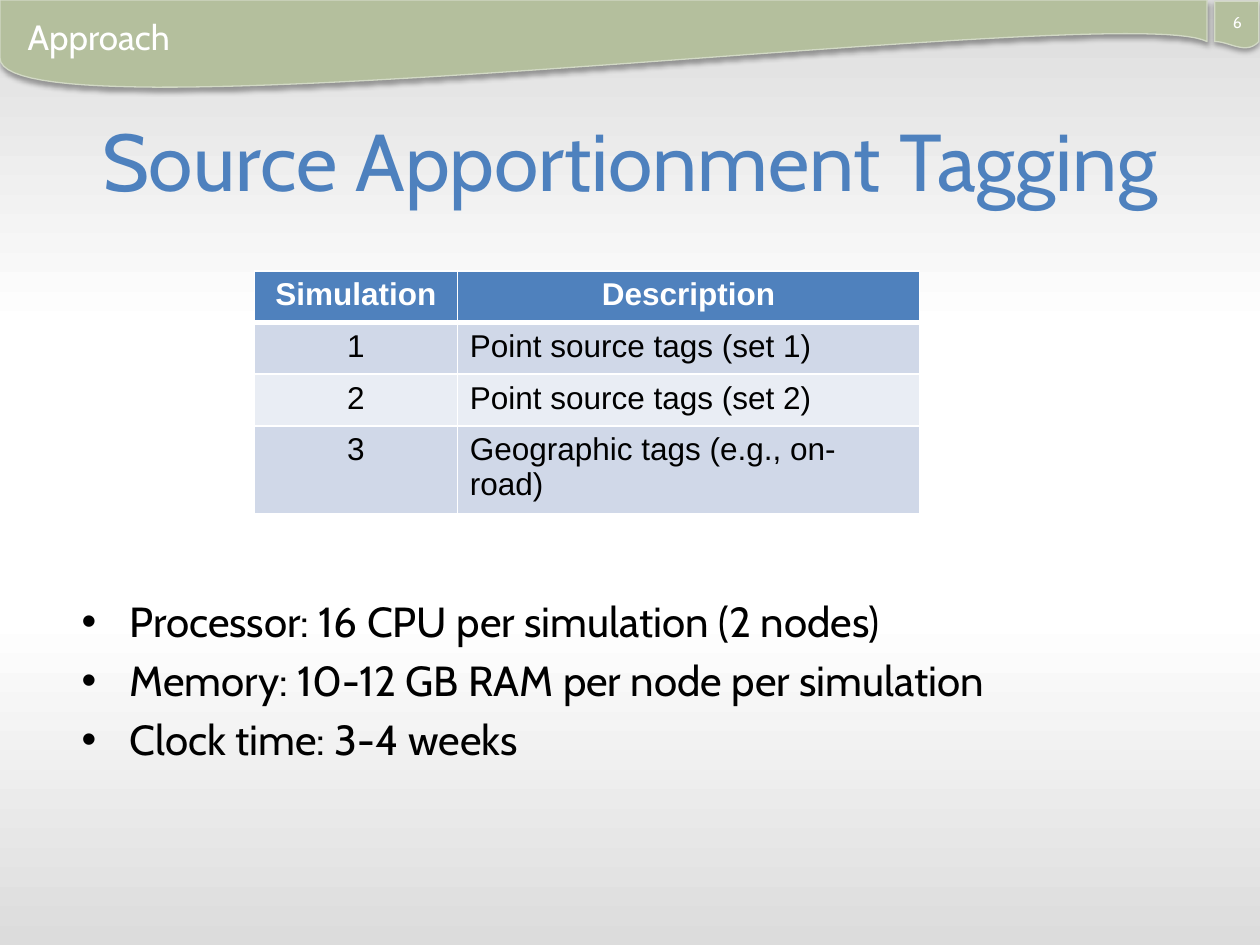
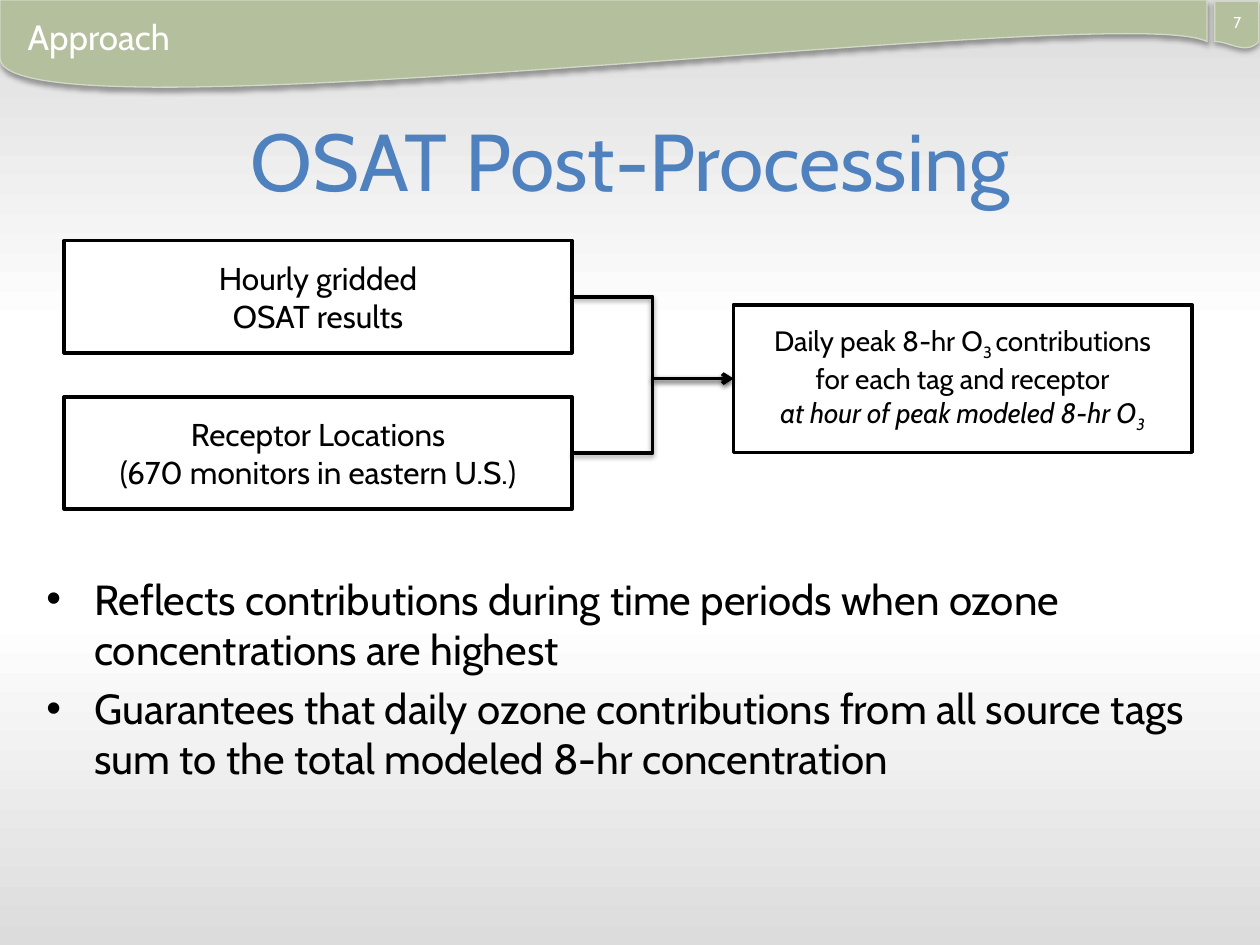
"""Build two slides on source apportionment tagging and its post-processing."""
import copy
import dataclasses

import lxml.etree
import pptx
import pptx.dml.color
import pptx.enum.shapes
import pptx.enum.text
import pptx.oxml.ns
import pptx.util

Inches, Pt = pptx.util.Inches, pptx.util.Pt
Align, Anchor = pptx.enum.text.PP_ALIGN, pptx.enum.text.MSO_ANCHOR

FONT = "Cabin"
COLORS = {
    "black": "000000", "white": "FFFFFF", "edge": "DCDCDC",
    "band": "B4BF9D", "rim": "D2D9C5", "title": "4E81BE",
    "head": "4F81BD", "odd": "D0D8E8", "even": "E9EDF4",
}
STOPS = [(0, "edge"), (35, "white"), (65, "white"), (100, "edge")]


@dataclasses.dataclass
class Bit:
    text: str
    low: bool = False
    slant: bool = False


@dataclasses.dataclass
class Box:
    left: float
    top: float
    width: float
    height: float

    def place(self) -> list:
        return [Inches(v) for v in (self.left, self.top, self.width, self.height)]


@dataclasses.dataclass
class Band:
    start: list
    curve: list


BANDS = [
    Band([(0, 0), (9.58, 0)], [(9.58, 0.33), (8.94, -0.01), (0, 1.17), (0, 0.46)]),
    Band([(9.64, 0.01), (9.99, 0.01)],
         [(9.99, 0.33), (9.89, 0.44), (9.76, 0.33), (9.64, 0.33)]),
]
TABLE = [
    ("Simulation", "Description"),
    ("1", "Point source tags (set 1)"),
    ("2", "Point source tags (set 2)"),
    ("3", "Geographic tags (e.g., on-road)"),
]
INPUTS = [
    (Box(0.51, 1.91, 4.03, 0.89), "Hourly gridded\nOSAT results"),
    (Box(0.51, 3.15, 4.03, 0.89), "Receptor Locations\n(670 monitors in eastern U.S.)"),
]
RESULT = [
    [Bit("Daily peak 8-hr O"), Bit("3 ", low=True),
     Bit("contributions\nfor each tag and receptor")],
    [Bit("at hour of peak modeled 8-hr O", slant=True), Bit("3", low=True, slant=True)],
]


def rgb(name: str) -> pptx.dml.color.RGBColor:
    return pptx.dml.color.RGBColor.from_string(COLORS[name])


def node(parent, tag: str, **attrs):
    return lxml.etree.SubElement(parent, pptx.oxml.ns.qn(tag), attrs)


def write(frame, lines: list, size=18, color="black", font=FONT, bold=False,
          align=Align.LEFT, anchor=Anchor.TOP, pitch=None, bullet=False) -> None:
    frame.word_wrap = True
    frame.vertical_anchor = anchor
    for row, line in enumerate(lines):
        para = frame.add_paragraph() if row else frame.paragraphs[0]
        if bullet:
            props = para._p.get_or_add_pPr()
            props.set("marL", str(Inches(0.38)))
            props.set("indent", str(-Inches(0.38)))
            node(props, "a:buFont", typeface="Arial")
            node(props, "a:buChar", char="•")
            if row:
                para.space_before = Pt(size * 0.2)
        para.alignment = align
        if pitch:
            para.line_spacing = Pt(pitch)
        for bit in [Bit(line)] if isinstance(line, str) else line:
            for part, text in enumerate(bit.text.split("\n")):
                if part:
                    para.add_line_break()
                run = para.add_run()
                run.text = text
                run.font.name, run.font.size = font, Pt(size)
                run.font.bold, run.font.italic = bold, bit.slant
                run.font.color.rgb = rgb(color)
                if bit.low:
                    run._r.get_or_add_rPr().set("baseline", "-25000")


def label(slide, box: Box, lines: list, **style) -> None:
    write(slide.shapes.add_textbox(*box.place()).text_frame, lines, **style)


def paint(shape, fill: str, line: str, width: float) -> None:
    shape.shadow.inherit = False
    shape.fill.solid()
    shape.fill.fore_color.rgb = rgb(fill)
    shape.line.color.rgb = rgb(line)
    shape.line.width = Pt(width)


def shade(props, alpha: int, drop: float) -> None:
    effects = props.find(pptx.oxml.ns.qn("a:effectLst"))
    if effects is None:
        effects = node(props, "a:effectLst")
    shadow = node(effects, "a:outerShdw", blurRad=str(Pt(3.1)), dist=str(Pt(drop)),
                  dir="5400000", rotWithShape="0")
    tint = node(shadow, "a:srgbClr", val=COLORS["black"])
    node(tint, "a:alpha", val=str(alpha * 1000))


def bend(curve: list, steps: int = 60) -> list:
    points = []
    for step in range(steps + 1):
        t = step / steps
        mix = ((1 - t) ** 3, 3 * t * (1 - t) ** 2, 3 * t * t * (1 - t), t ** 3)
        points.append(tuple(sum(m * p[axis] for m, p in zip(mix, curve))
                            for axis in (0, 1)))
    return points


def ribbon(slide, band: Band) -> None:
    first, *rest = [(Inches(x), Inches(y)) for x, y in band.start + bend(band.curve)]
    build = slide.shapes.build_freeform(*first)
    build.add_line_segments(rest, close=True)
    shape = build.convert_to_shape()
    paint(shape, "band", "rim", 0.75)
    shade(shape._element.spPr, 35, 1.8)


def backdrop(master) -> None:
    fill = master.background.fill
    fill.gradient()
    fill.gradient_angle = 270
    stops = master.element.find(".//" + pptx.oxml.ns.qn("p:bg")).find(
        ".//" + pptx.oxml.ns.qn("a:gsLst"))
    for stop in list(stops)[:2]:
        stops.append(copy.deepcopy(stop))
    for stop, (place, color) in zip(fill.gradient_stops, STOPS):
        stop.position = place / 100
        stop.color.rgb = rgb(color)


def page(deck, number: int, title: str):
    slide = deck.slides.add_slide(deck.slide_layouts[5])
    for band in BANDS:
        ribbon(slide, band)
    label(slide, Box(9.64, 0.05, 0.36, 0.33), [str(number)], size=9,
          color="white", align=Align.CENTER)
    label(slide, Box(0.12, 0.07, 4.65, 0.44), ["Approach"], size=20, color="white")
    head = slide.shapes.title
    head.left, head.top, head.width, head.height = Box(0, 0.98, 10, 0.7).place()
    write(head.text_frame, [title], size=46, color="title", align=Align.CENTER,
          anchor=Anchor.MIDDLE, pitch=46)
    return slide


def border(cell, below: float, above: float) -> None:
    props = cell._tc.get_or_add_tcPr()
    for side, width in (("L", 1), ("R", 1), ("T", above), ("B", below)):
        line = node(props, f"a:ln{side}", w=str(Pt(width)))
        node(node(line, "a:solidFill"), "a:srgbClr", val=COLORS["white"])


def grid(slide) -> None:
    table = slide.shapes.add_table(4, 2, *Box(2.02, 2.15, 5.28, 1.64).place()).table
    for col, width in zip(table.columns, (1.61, 3.67)):
        col.width = Inches(width)
    for r, texts in enumerate(TABLE):
        table.rows[r].height = Inches(0.41)
        fill = "head" if r == 0 else "odd" if r % 2 else "even"
        for c, text in enumerate(texts):
            cell = table.cell(r, c)
            border(cell, below=3 if r == 0 else 1, above=3 if r == 1 else 1)
            cell.fill.solid()
            cell.fill.fore_color.rgb = rgb(fill)
            write(cell.text_frame, [text], font="Arial", bold=r == 0,
                  color="black" if r else "white",
                  align=Align.LEFT if r and c else Align.CENTER)


def block(slide, box: Box, lines: list, size: int):
    shape = slide.shapes.add_shape(pptx.enum.shapes.MSO_SHAPE.RECTANGLE, *box.place())
    paint(shape, "white", "black", 2)
    write(shape.text_frame, lines, size=size, align=Align.CENTER, anchor=Anchor.MIDDLE)
    return shape


def link(slide, source, target) -> None:
    line = slide.shapes.add_connector(pptx.enum.shapes.MSO_CONNECTOR.ELBOW, 0, 0, 0, 0)
    line.begin_connect(source, 3)
    line.end_connect(target, 1)
    line.line.color.rgb = rgb("black")
    line.line.width = Pt(2)
    node(line.line._get_or_add_ln(), "a:tailEnd", type="arrow")
    shade(line._element.spPr, 38, 1.6)


def main() -> None:
    deck = pptx.Presentation()
    deck.slide_width, deck.slide_height = Inches(10), Inches(7.5)
    backdrop(deck.slide_master)

    tags = page(deck, 6, "Source Apportionment Tagging")
    grid(tags)
    label(tags, Box(0.55, 4.68, 8.92, 1.47), [
        "Processor: 16 CPU per simulation (2 nodes)",
        "Memory: 10-12 GB RAM per node per simulation",
        "Clock time: 3-4 weeks",
    ], size=24, bullet=True)

    post = page(deck, 7, "OSAT Post-Processing")
    result = block(post, Box(5.82, 2.42, 3.64, 1.17), RESULT, 16)
    for box, text in INPUTS:
        link(post, block(post, box, [text], 18), result)
    label(post, Box(0.27, 4.5, 9.47, 2.28), [
        "Reflects contributions during time periods when ozone concentrations are highest",
        "Guarantees that daily ozone contributions from all source tags sum to the total "
        "modeled 8-hr concentration",
    ], size=24, bullet=True)

    deck.save("out.pptx")


if __name__ == "__main__":
    main()
